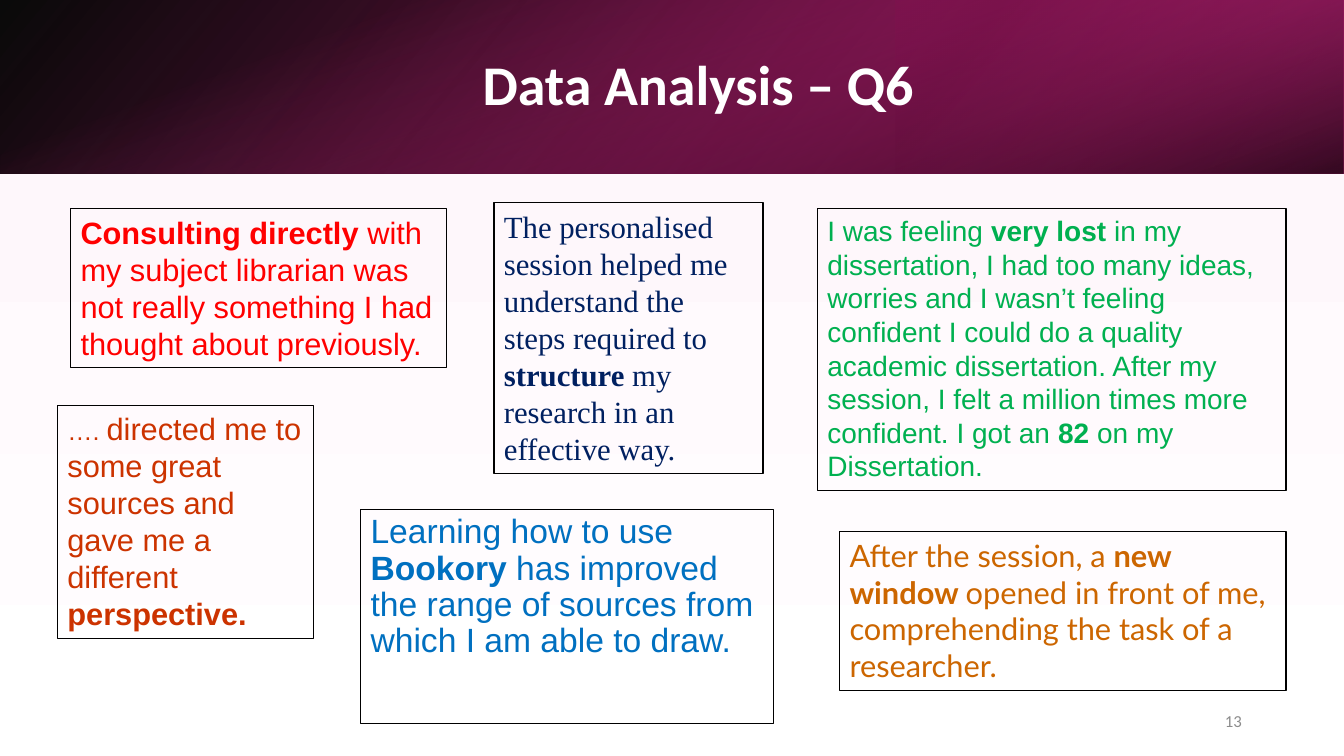
from dataclasses import dataclass

from lxml.etree import SubElement
from pptx import Presentation
from pptx.dml.color import RGBColor
from pptx.enum.shapes import MSO_SHAPE
from pptx.enum.text import MSO_ANCHOR, MSO_AUTO_SIZE, PP_ALIGN
from pptx.oxml.ns import qn
from pptx.util import Cm, Pt


@dataclass(frozen=True)
class Theme:
    white: str = "FFFFFF"
    black: str = "000000"
    blush: str = "FEF4FA"
    pink: str = "E32D91"
    magenta: str = "B4186E"
    plum: str = "781049"
    grey: str = "8C8C8C"
    red: str = "FF0000"
    navy: str = "002060"
    green: str = "00B050"
    rust: str = "CC3300"
    blue: str = "0070C0"
    amber: str = "CC6600"
    heading_font: str = "Calibri"
    title_size: int = 40
    large_size: int = 24
    quote_size: int = 22
    small_size: int = 20
    lead_size: int = 18
    number_size: int = 12
    outline_width: float = 0.75


THEME = Theme()
SLIDE_WIDTH, SLIDE_HEIGHT = 33.87, 19.05
HEADER_HEIGHT = 4.37


@dataclass(frozen=True)
class Quote:
    """A boxed comment; ** marks bold passages in its text."""
    box: tuple
    text: str
    color: str
    font: str = "Arial"
    size: int = THEME.quote_size
    lead: str = ""
    line_spacing: float = 1.0
    grows: bool = True


QUOTES = [
    Quote((9.09, 12.85, 10.41, 5.38),
          "Learning how to use **Bookory **has improved the range of sources "
          "from which I am able to draw.",
          THEME.blue, size=THEME.large_size, line_spacing=0.9, grows=False),
    Quote((12.45, 5.11, 6.78, 6.83),
          "The personalised session helped me understand the steps required to "
          "**structure **my research in an effective way.",
          THEME.navy, font="Times New Roman"),
    Quote((20.6, 5.26, 11.81, 7.09),
          "I was feeling **very lost **in my dissertation, I had too many ideas, "
          "worries and I wasn’t feeling confident I could do a quality academic "
          "dissertation. After my session, I felt a million times more confident. "
          "I got an **82** on my Dissertation.",
          THEME.green, size=THEME.small_size),
    Quote((1.45, 10.21, 6.45, 5.89),
          "directed me to some great sources and gave me a different "
          "**perspective.**",
          THEME.rust, lead="…. "),
    Quote((21.16, 13.39, 11.25, 4.01),
          "After the session, a **new window **opened in front of me, "
          "comprehending the task of a researcher.",
          THEME.amber, font="Lato"),
    Quote((1.78, 5.26, 9.47, 4.01),
          "**Consulting directly **with my subject librarian was not really "
          "something I had thought about previously.",
          THEME.red),
]


def lengths(box):
    return [Cm(value) for value in box]


def style_font(font, name, size, color):
    font.name = name
    font.size = Pt(size)
    font.color.rgb = RGBColor.from_string(color)


def fill_gradient(fill, stops, angle):
    """Apply two (position, color) stops at a clockwise angle in degrees."""
    fill.gradient()
    fill.gradient_angle = (360 - angle) % 360
    for gradient_stop, (position, color) in zip(fill.gradient_stops, stops):
        gradient_stop.position = position
        gradient_stop.color.rgb = RGBColor.from_string(color)


def add_glow(slide, box, stops, opacities, angle, rotation=0, flipped=False):
    """Add a borderless rectangle with a translucent gradient."""
    shape = slide.shapes.add_shape(MSO_SHAPE.RECTANGLE, *lengths(box))
    shape.shadow.inherit = False
    shape.line.fill.background()
    shape.rotation = rotation
    fill_gradient(shape.fill, stops, angle)
    properties = shape._element.spPr
    if flipped:
        properties.find(qn("a:xfrm")).set("flipH", "1")
    for color, opacity in zip(properties.iter(qn("a:srgbClr")), opacities):
        SubElement(color, qn("a:alpha"), val=str(opacity * 1000))


def add_header(slide, box):
    left, top, width, height = box
    third = width / 3
    add_glow(slide, box, [(0, THEME.black), (1, THEME.magenta)],
             (96, 100), 140, flipped=True)
    add_glow(slide, (left + width - third, top, third, height),
             [(0.19, THEME.plum), (1, THEME.pink)],
             (68, 79), 320, rotation=180, flipped=True)
    offset = (width - height) / 2
    add_glow(slide, (left + offset, top - offset, height, width),
             [(0.23, THEME.pink), (0.99, THEME.black)],
             (0, 74), 340, rotation=90)

    title = slide.shapes.title
    slide.shapes._spTree.append(title._element)
    title.left, title.top, title.width, title.height = lengths(
        (left + 3.81, top + 0.97, 27.89, 2.44))
    frame = title.text_frame
    frame.text = "Data Analysis – Q6 "
    frame.auto_size = MSO_AUTO_SIZE.NONE
    frame.vertical_anchor = MSO_ANCHOR.MIDDLE
    paragraph = frame.paragraphs[0]
    paragraph.alignment = PP_ALIGN.CENTER
    paragraph.line_spacing = 0.9
    style_font(paragraph.font, THEME.heading_font, THEME.title_size, THEME.white)
    paragraph.font.bold = True


def add_quote(slide, quote):
    shape = slide.shapes.add_textbox(*lengths(quote.box))
    shape.line.color.rgb = RGBColor.from_string(THEME.black)
    shape.line.width = Pt(THEME.outline_width)
    frame = shape.text_frame
    frame.word_wrap = True
    frame.auto_size = (MSO_AUTO_SIZE.SHAPE_TO_FIT_TEXT if quote.grows
                       else MSO_AUTO_SIZE.NONE)
    paragraph = frame.paragraphs[0]
    paragraph.line_spacing = quote.line_spacing
    style_font(paragraph.font, quote.font, quote.size, quote.color)
    if quote.lead:
        run = paragraph.add_run()
        run.text = quote.lead
        run.font.size = Pt(THEME.lead_size)
    for index, passage in enumerate(quote.text.split("**")):
        if passage:
            run = paragraph.add_run()
            run.text = passage
            run.font.bold = index % 2 == 1


def add_slide_number(slide, box, number):
    frame = slide.shapes.add_textbox(*lengths(box)).text_frame
    frame.word_wrap = True
    frame.vertical_anchor = MSO_ANCHOR.MIDDLE
    paragraph = frame.paragraphs[0]
    paragraph.text = str(number)
    paragraph.alignment = PP_ALIGN.RIGHT
    style_font(paragraph.font, THEME.heading_font, THEME.number_size, THEME.grey)


def main():
    presentation = Presentation()
    presentation.slide_width = Cm(SLIDE_WIDTH)
    presentation.slide_height = Cm(SLIDE_HEIGHT)
    slide = presentation.slides.add_slide(
        presentation.slide_layouts.get_by_name("Title Only"))
    fill_gradient(slide.background.fill,
                  [(0, THEME.blush), (1, THEME.white)], 90)
    add_header(slide, (0, 0, SLIDE_WIDTH, HEADER_HEIGHT))
    for quote in QUOTES:
        add_quote(slide, quote)
    add_slide_number(slide, (23.93, 17.65, 7.62, 1.02), 13)
    presentation.save("out.pptx")


if __name__ == "__main__":
    main()
